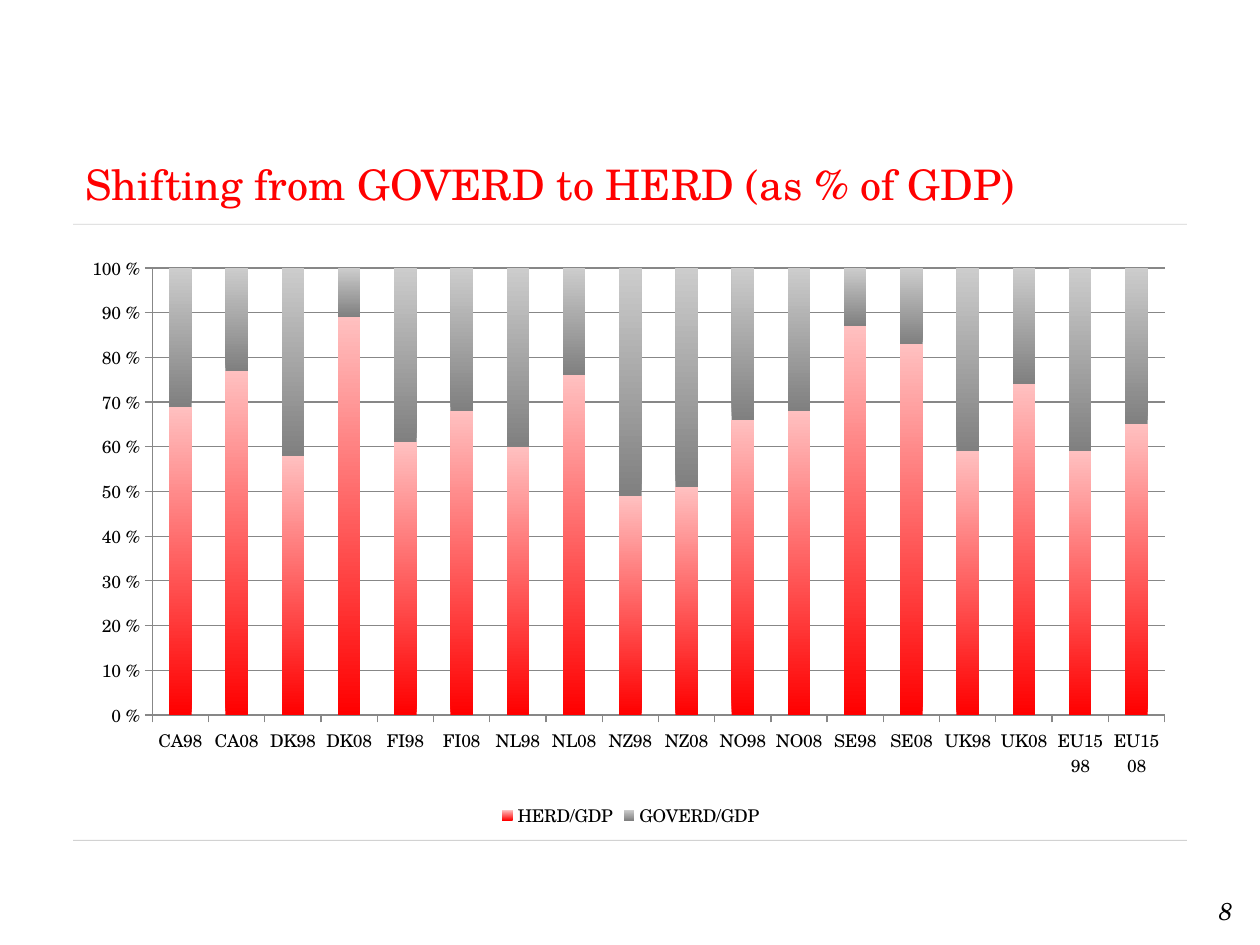
from dataclasses import dataclass

import pptx
import pptx.chart.data
import pptx.dml.color
import pptx.enum.chart
import pptx.enum.shapes
import pptx.enum.text
import pptx.oxml
import pptx.oxml.ns
import pptx.util
from pptx.dml.color import RGBColor
from pptx.util import Inches

FONT = "TeX Gyre Schola"
RED = RGBColor(0xFF, 0x00, 0x00)
PALE_RED = RGBColor(0xFF, 0xC0, 0xC0)
GRAY = RGBColor(0x80, 0x80, 0x80)
PALE_GRAY = RGBColor(0xCC, 0xCC, 0xCC)
AXIS_GRAY = RGBColor(0x87, 0x87, 0x87)
BLACK = RGBColor(0x00, 0x00, 0x00)
NS = pptx.oxml.ns.nsdecls("a")
CHART_NS = pptx.oxml.ns.nsdecls("c")


@dataclass
class Label:
    text: str
    left: float
    top: float
    width: float
    height: float
    size: float
    color: RGBColor
    align: pptx.enum.text.PP_ALIGN
    anchor: pptx.enum.text.MSO_ANCHOR
    italic: bool = False


@dataclass
class Spending:
    name: str
    values: tuple[int, ...]
    bottom_color: RGBColor
    top_color: RGBColor


LABELS = [
    Label("Shifting from GOVERD to HERD (as % of GDP)", 0.58, 1.17, 8.83, 0.58, 24, RED,
          pptx.enum.text.PP_ALIGN.LEFT, pptx.enum.text.MSO_ANCHOR.MIDDLE),
    Label("8", 8.7, 7.06, 1.18, 0.33, 14, BLACK,
          pptx.enum.text.PP_ALIGN.RIGHT, pptx.enum.text.MSO_ANCHOR.TOP, italic=True),
]
RULE_TOPS = (1.78, 6.67)
REGIONS = ("CA", "DK", "FI", "NL", "NZ", "NO", "SE", "UK", "EU15 ")
YEARS = ("98", "08")
SPENDING = [
    Spending("HERD/GDP", (69, 77, 58, 89, 61, 68, 60, 76, 49, 51, 66, 68, 87, 83, 59, 74, 59, 65),
             RED, PALE_RED),
    Spending("GOVERD/GDP", (31, 23, 42, 11, 39, 32, 40, 24, 51, 49, 34, 32, 13, 17, 41, 26, 41, 35),
             GRAY, PALE_GRAY),
]


def add_label(s: pptx.slide.Slide, label: Label) -> None:
    box = s.shapes.add_textbox(Inches(label.left), Inches(label.top),
                               Inches(label.width), Inches(label.height))
    tf = box.text_frame
    tf.word_wrap = True
    tf.vertical_anchor = label.anchor
    p = tf.paragraphs[0]
    p.alignment = label.align
    r = p.add_run()
    r.text = label.text
    r.font.name = FONT
    r.font.size = pptx.util.Pt(label.size)
    r.font.italic = label.italic
    r.font.color.rgb = label.color


def add_rule(s: pptx.slide.Slide, top: float) -> None:
    """Draw a thin, mostly transparent line across the content width."""
    rule = s.shapes.add_connector(pptx.enum.shapes.MSO_CONNECTOR.STRAIGHT,
                                  Inches(0.58), Inches(top), Inches(9.42), Inches(top))
    rule.line.width = pptx.util.Pt(0.5)
    rule.line.color.rgb = GRAY
    color = rule.line._ln.find(".//" + pptx.oxml.ns.qn("a:srgbClr"))
    color.append(pptx.oxml.parse_xml(f'<a:alpha {NS} val="35000"/>'))
    rule._element.spPr.append(pptx.oxml.parse_xml(f"<a:effectLst {NS}/>"))


def style_axis_line(line: pptx.dml.line.LineFormat) -> None:
    line.color.rgb = AXIS_GRAY
    line.width = pptx.util.Pt(0.75)


def set_plot_area(chart: pptx.chart.chart.Chart, x: float, y: float, w: float, h: float) -> None:
    """Fix the inner plot area, in fractions of the chart size."""
    area = chart._chartSpace.chart.plotArea
    for old in area.findall(pptx.oxml.ns.qn("c:layout")):
        area.remove(old)
    area.insert(0, pptx.oxml.parse_xml(
        f'<c:layout {CHART_NS}><c:manualLayout><c:layoutTarget val="inner"/>'
        f'<c:xMode val="edge"/><c:yMode val="edge"/><c:x val="{x}"/><c:y val="{y}"/>'
        f'<c:w val="{w}"/><c:h val="{h}"/></c:manualLayout></c:layout>'))


def add_spending_chart(s: pptx.slide.Slide) -> None:
    data = pptx.chart.data.CategoryChartData(number_format="0")
    data.categories = [region + year for region in REGIONS for year in YEARS]
    for spending in SPENDING:
        data.add_series(spending.name, spending.values)
    chart = s.shapes.add_chart(pptx.enum.chart.XL_CHART_TYPE.COLUMN_STACKED_100,
                               Inches(0.59), Inches(1.94), Inches(8.83), Inches(4.67), data).chart
    chart.has_title = False
    chart.font.name = FONT
    chart.font.size = pptx.util.Pt(10)
    chart.font.color.rgb = BLACK
    chart.has_legend = True
    chart.legend.position = pptx.enum.chart.XL_LEGEND_POSITION.BOTTOM
    chart.legend.include_in_layout = False

    for axis in (chart.category_axis, chart.value_axis):
        axis.major_tick_mark = pptx.enum.chart.XL_TICK_MARK.OUTSIDE
        axis.minor_tick_mark = pptx.enum.chart.XL_TICK_MARK.NONE
        style_axis_line(axis.format.line)
    values = chart.value_axis
    values.minimum_scale, values.maximum_scale, values.major_unit = 0, 1, 0.1
    values.tick_labels.number_format = "0 %"
    values.tick_labels.number_format_is_linked = False
    values.has_major_gridlines = True
    style_axis_line(values.major_gridlines.format.line)

    plot = chart.plots[0]
    plot.gap_width = 150
    plot.overlap = 100
    plot.vary_by_categories = False
    for series, spending in zip(plot.series, SPENDING):
        fill = series.format.fill
        fill.gradient()
        fill.gradient_angle = 90
        for stop, color, position in zip(fill.gradient_stops,
                                         (spending.bottom_color, spending.top_color), (0, 1)):
            stop.color.rgb = color
            stop.position = position
    set_plot_area(chart, 0.07, 0.04, 0.91, 0.76)


def main() -> None:
    prs = pptx.Presentation()
    prs.slide_width, prs.slide_height = Inches(10), Inches(7.5)
    s = prs.slides.add_slide(prs.slide_layouts[6])
    for top in RULE_TOPS:
        add_rule(s, top)
    for label in LABELS:
        add_label(s, label)
    add_spending_chart(s)
    prs.save("out.pptx")


if __name__ == "__main__":
    main()
